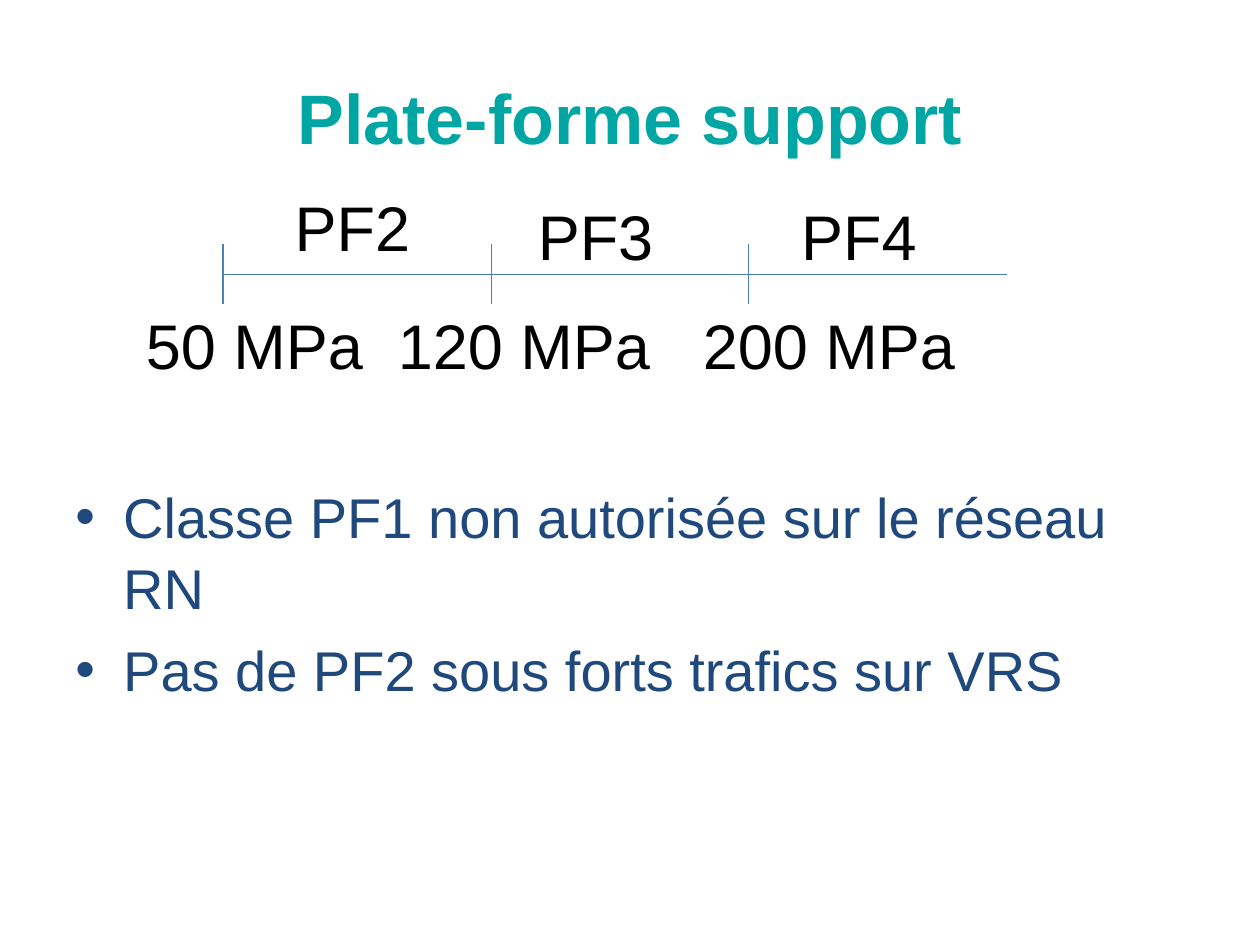
from dataclasses import dataclass

from lxml import etree
from pptx import Presentation
from pptx.dml.color import RGBColor
from pptx.enum.shapes import MSO_CONNECTOR
from pptx.enum.text import MSO_ANCHOR, PP_ALIGN
from pptx.oxml.ns import qn
from pptx.util import Inches, Pt

STRAIGHT = MSO_CONNECTOR.STRAIGHT
MIDDLE = MSO_ANCHOR.MIDDLE
CENTER = PP_ALIGN.CENTER

TEAL = "00A6A4"
NAVY = "1F497D"
BLACK = "000000"
AXIS_BLUE = "4B7EBC"

AXIS_LEFT, AXIS_RIGHT, AXIS_Y = 1.77, 7.99, 2.18
TICK_TOP, TICK_BOTTOM = 1.94, 2.41
TICKS = (AXIS_LEFT, 3.9, 5.94)
THRESHOLDS = ("50 MPa", "120 MPa", "200 MPa")
THRESHOLD_TABS = (2.0, 4.42)
BULLETS = (
    "Classe PF1 non autorisée sur le réseau RN",
    "Pas de PF2 sous forts trafics sur VRS",
)
BULLET_INDENT = 0.38


@dataclass(frozen=True)
class Label:
    text: str
    left: float
    top: float
    width: float = 1.42
    height: float = 0.71


CLASS_LABELS = (
    Label("PF2", 2.24, 1.45),
    Label("PF3", 4.17, 1.52),
    Label("PF4", 6.26, 1.52),
)


def colour(value: str) -> RGBColor:
    return RGBColor.from_string(value)


def add_text(page, label: Label, size: float, ink: str, bold: bool = False):
    box = page.shapes.add_textbox(
        Inches(label.left), Inches(label.top), Inches(label.width), Inches(label.height)
    )
    box.text_frame.word_wrap = True
    box.text_frame.text = label.text
    for para in box.text_frame.paragraphs:
        for span in para.runs:
            span.font.name = "Arial"
            span.font.size = Pt(size)
            span.font.bold = bold
            span.font.color.rgb = colour(ink)
    return box


def add_line(page, x1: float, y1: float, x2: float, y2: float) -> None:
    line = page.shapes.add_connector(
        STRAIGHT, Inches(x1), Inches(y1), Inches(x2), Inches(y2)
    )
    line.line.color.rgb = colour(AXIS_BLUE)
    line.line.width = Pt(0.75)
    etree.SubElement(line._element.spPr, qn("a:effectLst"))


def add_bullet(para) -> None:
    properties = para._p.get_or_add_pPr()
    properties.set("marL", str(Inches(BULLET_INDENT)))
    properties.set("indent", str(-Inches(BULLET_INDENT)))
    etree.SubElement(properties, qn("a:buFont"), typeface="Arial")
    etree.SubElement(properties, qn("a:buChar"), char="•")


def add_tabs(para, stops: tuple[float, ...]) -> None:
    tabs = etree.SubElement(para._p.get_or_add_pPr(), qn("a:tabLst"))
    for stop in stops:
        etree.SubElement(tabs, qn("a:tab"), pos=str(Inches(stop)), algn="l")


def add_title(page) -> None:
    label = Label("Plate-forme support", 0.5, 0.3, 9, 1.25)
    frame = add_text(page, label, 40, TEAL, bold=True).text_frame
    frame.vertical_anchor = MIDDLE
    frame.paragraphs[0].alignment = CENTER


def add_rules(page) -> None:
    label = Label("\n".join(BULLETS), 0.5, 3.75, 9, 2.95)
    box = add_text(page, label, 32, NAVY)
    for index, para in enumerate(box.text_frame.paragraphs):
        add_bullet(para)
        para.line_spacing = 1.06
        para.space_before = Pt(6 if index else 0)


def add_scale(page) -> None:
    add_line(page, AXIS_LEFT, AXIS_Y, AXIS_RIGHT, AXIS_Y)
    for x in TICKS:
        add_line(page, x, TICK_TOP, x, TICK_BOTTOM)
    for label in CLASS_LABELS:
        add_text(page, label, 36, BLACK)
    thresholds = Label("\t".join(THRESHOLDS), 1.06, 2.38, 6.77)
    box = add_text(page, thresholds, 36, BLACK)
    add_tabs(box.text_frame.paragraphs[0], THRESHOLD_TABS)


def main() -> None:
    deck = Presentation()
    deck.slide_width = Inches(10)
    deck.slide_height = Inches(7.5)
    page = deck.slides.add_slide(deck.slide_layouts[6])
    add_title(page)
    add_rules(page)
    add_scale(page)
    deck.save("out.pptx")


if __name__ == "__main__":
    main()
